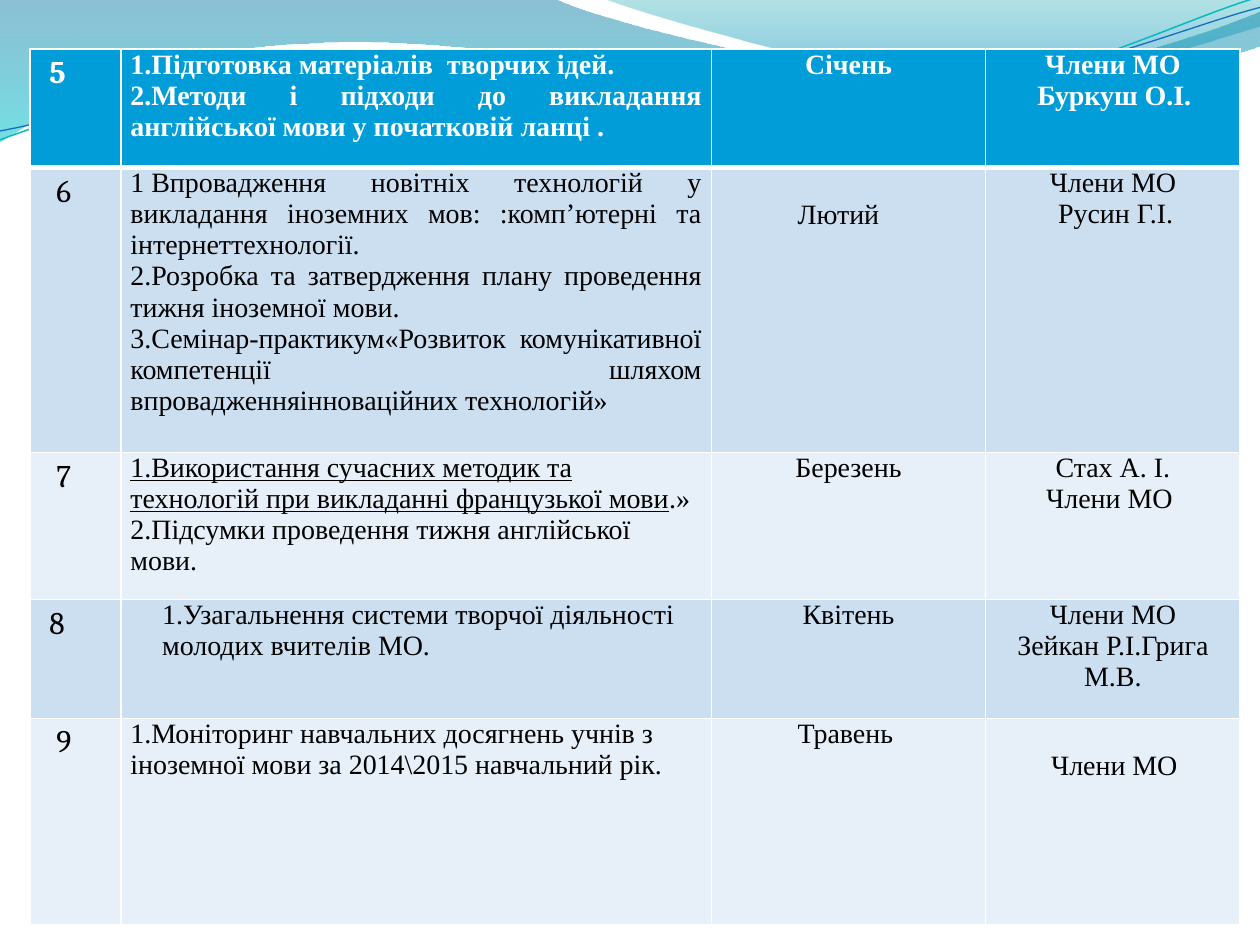
from dataclasses import dataclass

from lxml.etree import SubElement
from pptx import Presentation
from pptx.dml.color import RGBColor
from pptx.enum.text import PP_ALIGN
from pptx.oxml.ns import qn
from pptx.util import Cm, Pt


@dataclass(frozen=True)
class Theme:
    header: str = "009DD9"
    bands: tuple = ("CCDFF1", "E7EFF8")
    white: str = "FFFFFF"
    black: str = "000000"
    # Stops are (position, colour, opacity in percent)
    back_wave: tuple = ((0, "0074A1", 45), (1, "00C6CF", 55))
    front_wave: tuple = ((0, "00A1A9", 30), (0.8, "008BBF", 45))
    teal_line: str = "0AB8BF"
    blue_line: str = "0F6FC6"
    number_font: str = "Cambria"
    body_font: str = "Times New Roman"
    number_size: int = 18
    body_size: int = 16


@dataclass(frozen=True)
class Line:
    text: str
    align: PP_ALIGN = PP_ALIGN.LEFT
    indent: float = 0
    underlined: str = ""  # opening words, set before text


THEME = Theme()
HARD_SPACE = chr(160)
LINE_HEIGHT = 0.64
SWOOSH_ANGLE = 357.3
COLUMN_WIDTHS = (1.84, 11.9, 5.53, 5.13)
ROW_HEIGHTS = (2.39, 5.74, 2.97, 2.39, 4.16)


def centred(text):
    return Line(text, PP_ALIGN.CENTER)


def justified(text):
    return Line(text, PP_ALIGN.JUSTIFY)


# Each row: number, number indent, topics, month, people; then columns that start one line lower
PLAN = (
    ("5", 0.14,
     (justified(f"1.Підготовка матеріалів {HARD_SPACE}творчих ідей."),
      justified("2.Методи і підходи до викладання англійської мови у початковій ланці .")),
     (centred("Січень"),),
     (centred("Члени МО"), Line("Буркуш О.І.", indent=0.85)), ()),
    ("6", 0.28,
     (justified(f"1{HARD_SPACE}Впровадження новітніх технологій у викладання іноземних мов: "
                ":комп’ютерні та інтернеттехнології."),
      justified("2.Розробка та затвердження плану проведення тижня іноземної мови."),
      justified("3.Семінар-практикум«Розвиток комунікативної компетенції шляхом "
                "впровадженняінноваційних технологій»")),
     (Line("Лютий", indent=1.55),),
     (centred("Члени МО"), Line("Русин Г.І.", indent=1.27)), (2,)),
    ("7", 0.28,
     (Line(".»", underlined="1.Використання сучасних методик та технологій "
                            "при викладанні французької мови"),
      Line("2.Підсумки проведення тижня англійської мови.")),
     (centred("Березень"),),
     (centred("Стах А. І."), centred("Члени МО ")), ()),
    ("8", 0.14,
     (Line("1.Узагальнення системи творчої діяльності  молодих вчителів МО.", indent=0.64),),
     (centred("Квітень"),),
     (centred("Члени МО"), centred("Зейкан Р.І.Грига М.В.")), ()),
    ("9", 0.28,
     (Line("1.Моніторинг навчальних досягнень учнів з іноземної мови "
           "за 2014\\2015 навчальний рік."),),
     (Line("Травень", indent=1.55),),
     (Line("Члени МО", indent=1.13),), (3,)),
)


def is_curve(step):
    return len(step) == 3


def add_outline(slide, left, top, steps, close):
    """Draw through points and (control, control, end) curves."""
    def place(point):
        return Cm(left + point[0]), Cm(top + point[1])

    anchors = [place(step[-1] if is_curve(step) else step) for step in steps]
    builder = slide.shapes.build_freeform(*anchors[0], scale=1.0)
    builder.add_line_segments(anchors[1:], close=close)
    outline = builder.convert_to_shape()
    outline.shadow.inherit = False
    segments = list(outline._element.spPr.iter(qn("a:lnTo")))
    for step, segment in zip(steps[1:], segments):
        if is_curve(step):
            curve = SubElement(segment.getparent(), qn("a:cubicBezTo"))
            for x, y in map(place, step):
                SubElement(curve, qn("a:pt"), x=str(x - outline.left), y=str(y - outline.top))
            segment.getparent().replace(segment, curve)
    return outline


def add_wave(slide, left, top, steps, stops):
    wave = add_outline(slide, left, top, steps, True)
    wave.line.fill.background()
    wave.fill.gradient()
    wave.fill.gradient_angle = 270
    for stop, (position, colour, _) in zip(wave.fill.gradient_stops, stops):
        stop.position = position
        stop.color.rgb = RGBColor.from_string(colour)
    colours = wave._element.spPr.iter(qn("a:srgbClr"))
    for colour, (_, _, opacity) in zip(colours, stops):
        SubElement(colour, qn("a:alpha"), val=str(opacity * 1000))


def add_swoosh(slide, left, top, steps, colour, width):
    swoosh = add_outline(slide, left, top, steps, False)
    swoosh.rotation = SWOOSH_ANGLE
    swoosh.fill.background()
    swoosh.line.color.rgb = RGBColor.from_string(colour)
    swoosh.line.width = Pt(width)


def add_waves(slide, left, top):
    add_wave(slide, left, top, (
        (0, 0), (11.18, -0.03),
        ((12.09, 0.43), (16.87, 1.6), (19.25, 1.6)),
        ((21.67, 1.6), (24.33, 0.66), (25.4, 0.23)),
        (25.43, 0.91),
        ((24.97, 1.12), (22.1, 1.93), (18.95, 1.91)),
        ((15.8, 1.91), (9.7, 0.71), (6.53, 0.86)),
        ((3.28, 0.91), (1.17, 2.11), (-0.03, 2.87))), THEME.back_wave)
    add_wave(slide, left, top, (
        (12.17, -0.03),
        ((12.93, 0.28), (17.32, 1.57), (19.53, 1.65)),
        ((21.74, 1.75), (24.41, 0.81), (25.4, 0.53)),
        (25.4, 0)), THEME.front_wave)
    add_swoosh(slide, left, top, (
        (-0.05, 2.22),
        ((1.19, 1.82), (4.02, 1.04), (7.05, 1.05)),
        ((10.05, 1.07), (15.02, 2.37), (18.08, 2.29)),
        ((21.13, 2.2), (23.86, 0.91), (25.4, 0.55))), THEME.teal_line, 0.85)
    add_swoosh(slide, left, top, (
        (-0.04, 2.04),
        ((1.16, 1.89), (4.17, 1.15), (7.2, 1.16)),
        ((10.25, 1.18), (15.13, 2.25), (18.19, 2.16)),
        ((21.22, 2.1), (23.93, 1.06), (25.45, 0.75))), THEME.blue_line, 0.75)


def style_cell(cell, colour, bottom_width):
    for side in "LRTB":
        width = bottom_width if side == "B" else 1
        border = SubElement(cell._tc.get_or_add_tcPr(), qn(f"a:ln{side}"), w=str(Pt(width)))
        fill = SubElement(border, qn("a:solidFill"))
        SubElement(fill, qn("a:srgbClr"), val=THEME.white)
    cell.fill.solid()
    cell.fill.fore_color.rgb = RGBColor.from_string(colour)


def write_lines(cell, lines, font_values, colour):
    frame = cell.text_frame
    for i, line in enumerate(lines):
        paragraph = frame.add_paragraph() if i else frame.paragraphs[0]
        paragraph.alignment = line.align
        if line.indent:
            paragraph._p.get_or_add_pPr().set("marL", str(Cm(line.indent)))
        for text, underline in ((line.underlined, True), (line.text, False)):
            if text:
                run = paragraph.add_run()
                run.text = text
                for name, value in {**font_values, "underline": underline}.items():
                    setattr(run.font, name, value)
                run.font.color.rgb = RGBColor.from_string(colour)


def add_plan(slide, left, top):
    plan = slide.shapes.add_table(len(PLAN), len(COLUMN_WIDTHS), Cm(left), Cm(top),
                                  Cm(sum(COLUMN_WIDTHS)), Cm(sum(ROW_HEIGHTS))).table
    for column, width in zip(plan.columns, COLUMN_WIDTHS):
        column.width = Cm(width)
    for r, (number, indent, *texts, lowered) in enumerate(PLAN):
        plan.rows[r].height = Cm(ROW_HEIGHTS[r])
        is_header = r == 0
        fill = THEME.header if is_header else THEME.bands[(r - 1) % 2]
        colour = THEME.white if is_header else THEME.black
        for c, lines in enumerate(((Line(number, indent=indent),), *texts)):
            cell = plan.cell(r, c)
            style_cell(cell, fill, 3 if is_header else 1)
            font_values = {"name": THEME.body_font, "size": Pt(THEME.body_size),
                           "bold": is_header}
            if c == 0:
                font_values.update(name=THEME.number_font, size=Pt(THEME.number_size))
            else:
                margins = {"margin_left": 0.19, "margin_right": 0.19, "margin_bottom": 0,
                           "margin_top": LINE_HEIGHT if c in lowered else 0}
                for name, value in margins.items():
                    setattr(cell, name, Cm(value))
            write_lines(cell, lines, font_values, colour)


def main():
    deck = Presentation()
    deck.slide_width, deck.slide_height = Cm(25.4), Cm(19.05)
    slide = deck.slides.add_slide(deck.slide_layouts[6])
    add_waves(slide, 0, 0)
    add_plan(slide, 0.6, 0.99)
    deck.save("out.pptx")


if __name__ == "__main__":
    main()
